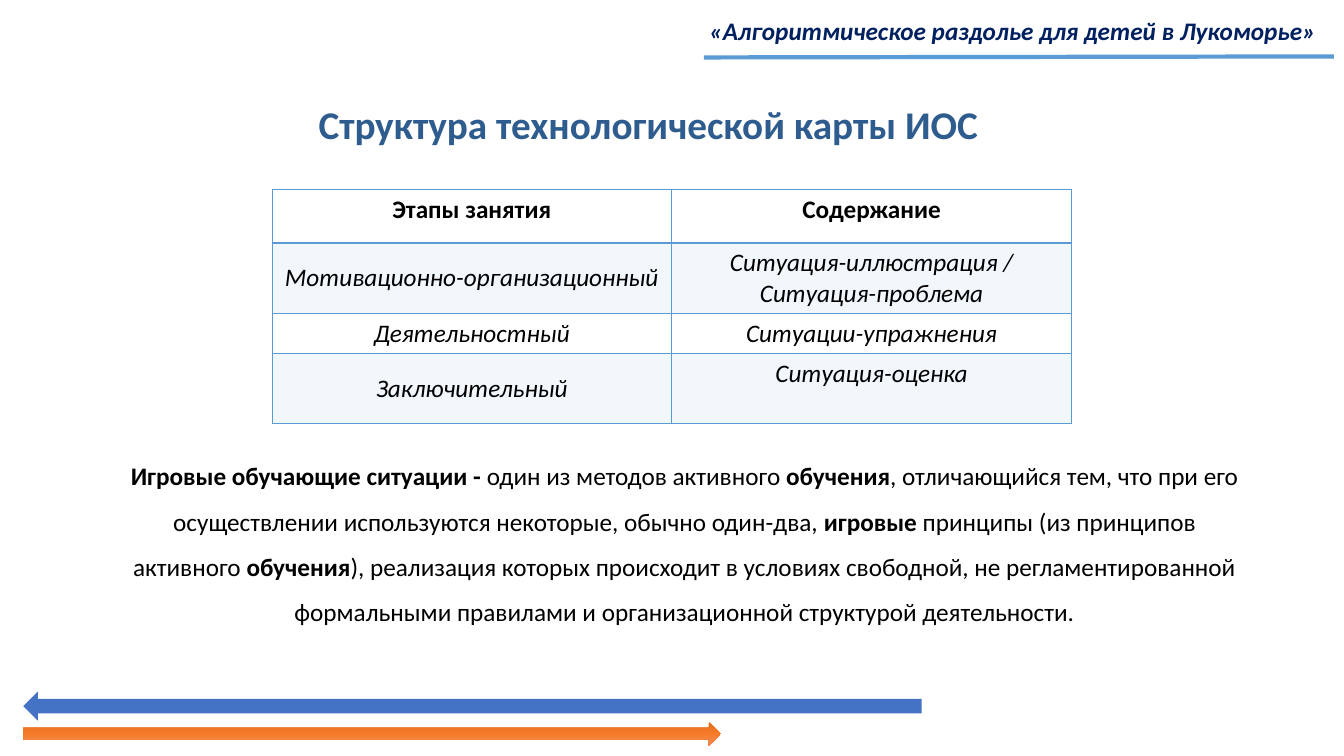
from copy import deepcopy

from lxml import etree
from pptx import Presentation
from pptx.dml.color import RGBColor
from pptx.enum.shapes import MSO_CONNECTOR, MSO_SHAPE
from pptx.enum.text import MSO_ANCHOR, PP_ALIGN
from pptx.oxml.ns import qn
from pptx.util import Pt

PX = 9144
FONT = "Calibri"
BLACK = RGBColor(0x00, 0x00, 0x00)
NAVY = RGBColor(0x00, 0x20, 0x60)
TITLE_BLUE = RGBColor(0x2E, 0x5C, 0x8E)
SKY = RGBColor(0x5B, 0x9B, 0xD5)
PALE_BLUE = RGBColor(0xBD, 0xD7, 0xEE)
ARROW_BLUE = RGBColor(0x44, 0x72, 0xC4)
ORANGE_DARK = RGBColor(0xE5, 0x6C, 0x19)
ORANGE = RGBColor(0xF6, 0x7B, 0x28)
ORANGE_LIGHT = RGBColor(0xF1, 0x8C, 0x57)
LEFT, CENTER = PP_ALIGN.LEFT, PP_ALIGN.CENTER
TOP, MIDDLE = MSO_ANCHOR.TOP, MSO_ANCHOR.MIDDLE


def set_font(para, size, color, bold=None, italic=None):
    font = para.font
    font.name, font.size, font.bold, font.italic = FONT, Pt(size), bold, italic
    font.color.rgb = color


def add_text(bounds, align, spacing, wrap=True):
    box = page.shapes.add_textbox(*[value * PX for value in bounds])
    box.text_frame.word_wrap = wrap
    para = box.text_frame.paragraphs[0]
    para.alignment = align
    para.line_spacing = spacing
    return box.text_frame, para


deck = Presentation()
deck.slide_width, deck.slide_height = 1333 * PX, 750 * PX
page = deck.slides.add_slide(deck.slide_layouts[6])

frame, para = add_text((311, 95, 1206, 57), LEFT, 1.0)
frame.margin_left = frame.margin_right = 5 * PX
frame.margin_top = frame.margin_bottom = 5 * PX
para.text = "Структура технологической карты ИОС"
set_font(para, 28, TITLE_BLUE, bold=True)

arrows = []
for kind, bounds in (
    (MSO_SHAPE.LEFT_ARROW, (23, 686, 891, 29)),
    (MSO_SHAPE.RIGHT_ARROW, (23, 716, 692, 24)),
):
    arrow = page.shapes.add_shape(kind, *[value * PX for value in bounds])
    arrow.shadow.inherit = False
    arrow.line.fill.background()
    arrows.append(arrow)
back_arrow, forward_arrow = arrows
back_arrow.fill.solid()
back_arrow.fill.fore_color.rgb = ARROW_BLUE
forward_arrow.fill.gradient()
forward_arrow.fill.gradient_angle = 270
stop_list = forward_arrow.fill._fill._gradFill.find(qn("a:gsLst"))
stop_list.insert(1, deepcopy(stop_list[0]))
for stop, position, color in zip(
    forward_arrow.fill.gradient_stops, (0, 0.5, 1), (ORANGE_DARK, ORANGE, ORANGE_LIGHT)
):
    stop.position = position
    stop.color.rgb = color

rule = page.shapes.add_connector(
    MSO_CONNECTOR.STRAIGHT, 698 * PX, 57 * PX, 1323 * PX, 56 * PX
)
rule.line.color.rgb = SKY
rule.line.width = Pt(3)
etree.SubElement(rule._element.spPr, qn("a:effectLst"))

frame, para = add_text((687, -6, 635, 53), CENTER, Pt(33.6), wrap=False)
para.text = "«Алгоритмическое раздолье для детей в Лукоморье»"
set_font(para, 18, NAVY, bold=True, italic=True)

stages = (
    (53, TOP, TOP, "Этапы занятия", "Содержание"),
    (69, MIDDLE, TOP, "Мотивационно-организационный",
     "Ситуация-иллюстрация / Ситуация-проблема"),
    (39, MIDDLE, MIDDLE, "Деятельностный", "Ситуации-упражнения"),
    (69, MIDDLE, TOP, "Заключительный", "Ситуация-оценка"),
)
table = page.shapes.add_table(
    len(stages), 2, 270 * PX, 188 * PX, 793 * PX, 230 * PX
).table
table.first_row = table.horz_banding = False
for column, width in zip(table.columns, (396, 397)):
    column.width = width * PX
for row, (height, stage_anchor, content_anchor, stage, content) in enumerate(stages):
    table.rows[row].height = height * PX
    for col, (anchor, text) in enumerate(((stage_anchor, stage), (content_anchor, content))):
        cell = table.cell(row, col)
        cell.vertical_anchor = anchor
        para = cell.text_frame.paragraphs[0]
        para.text = text
        para.alignment = CENTER
        set_font(para, 18, BLACK, bold=row == 0, italic=row > 0)
        properties = cell._tc.get_or_add_tcPr()
        if row % 2:
            cell.fill.solid()
            cell.fill.fore_color.rgb = PALE_BLUE
            tint = properties.find(".//" + qn("a:srgbClr"))
            etree.SubElement(tint, qn("a:alpha"), val="20000")
        else:
            cell.fill.background()
        for order, side in enumerate(("L", "R", "T", "B")):
            thick = (row, side) in ((0, "B"), (1, "T"))
            border = etree.Element(qn("a:ln" + side), w=str(Pt(2 if thick else 1)))
            paint = etree.SubElement(border, qn("a:solidFill"))
            etree.SubElement(paint, qn("a:srgbClr"), val=str(SKY))
            properties.insert(order, border)

frame, para = add_text((91, 442, 1176, 180), CENTER, 1.5)
frame.vertical_anchor = MIDDLE
frame.margin_left = frame.margin_right = 32 * PX
set_font(para, 18, BLACK)
for text, bold in (
    ("Игровые обучающие ситуации -", True),
    (" один из методов активного ", False),
    ("обучения", True),
    (", отличающийся тем, что при его осуществлении используются некоторые, "
     "обычно один-два, ", False),
    ("игровые", True),
    (" принципы (из принципов активного ", False),
    ("обучения", True),
    ("), реализация которых происходит в условиях свободной, не регламентированной "
     "формальными правилами и организационной структурой деятельности.", False),
):
    span = para.add_run()
    span.text = text
    span.font.bold = bold

deck.save("out.pptx")
